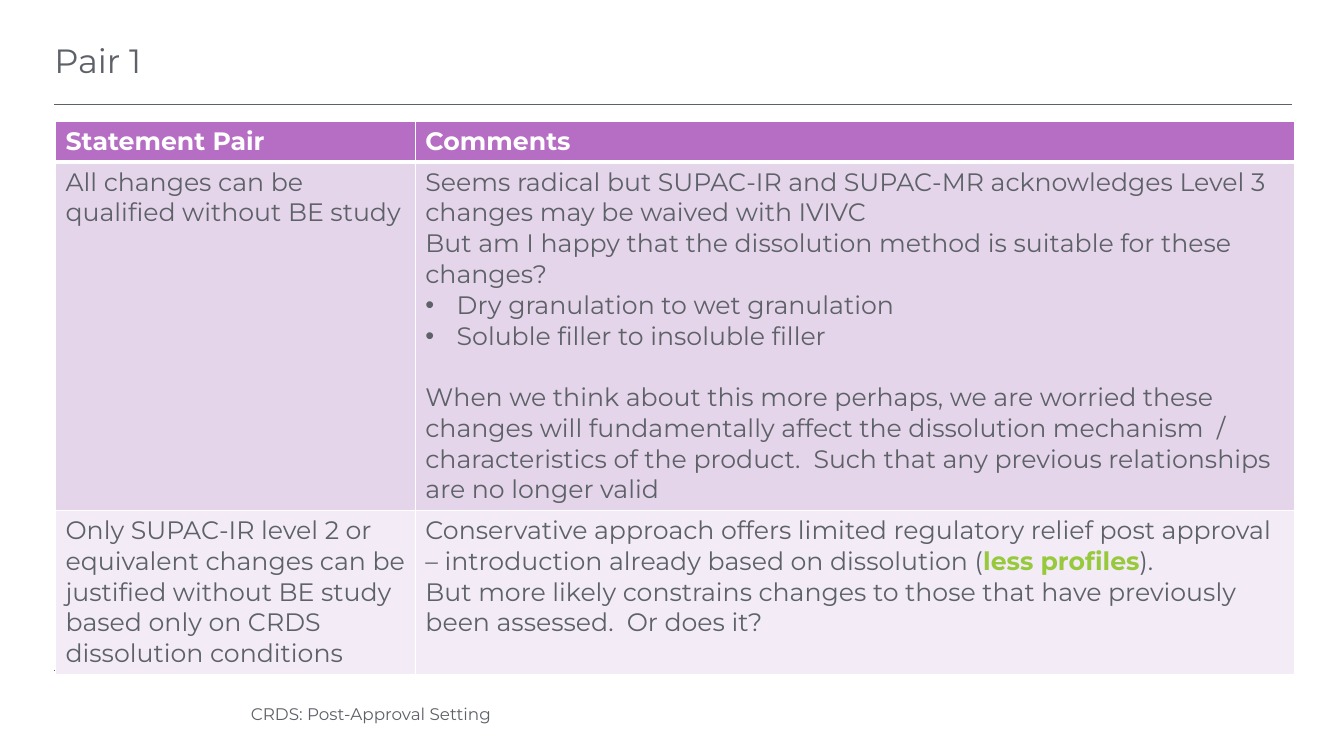
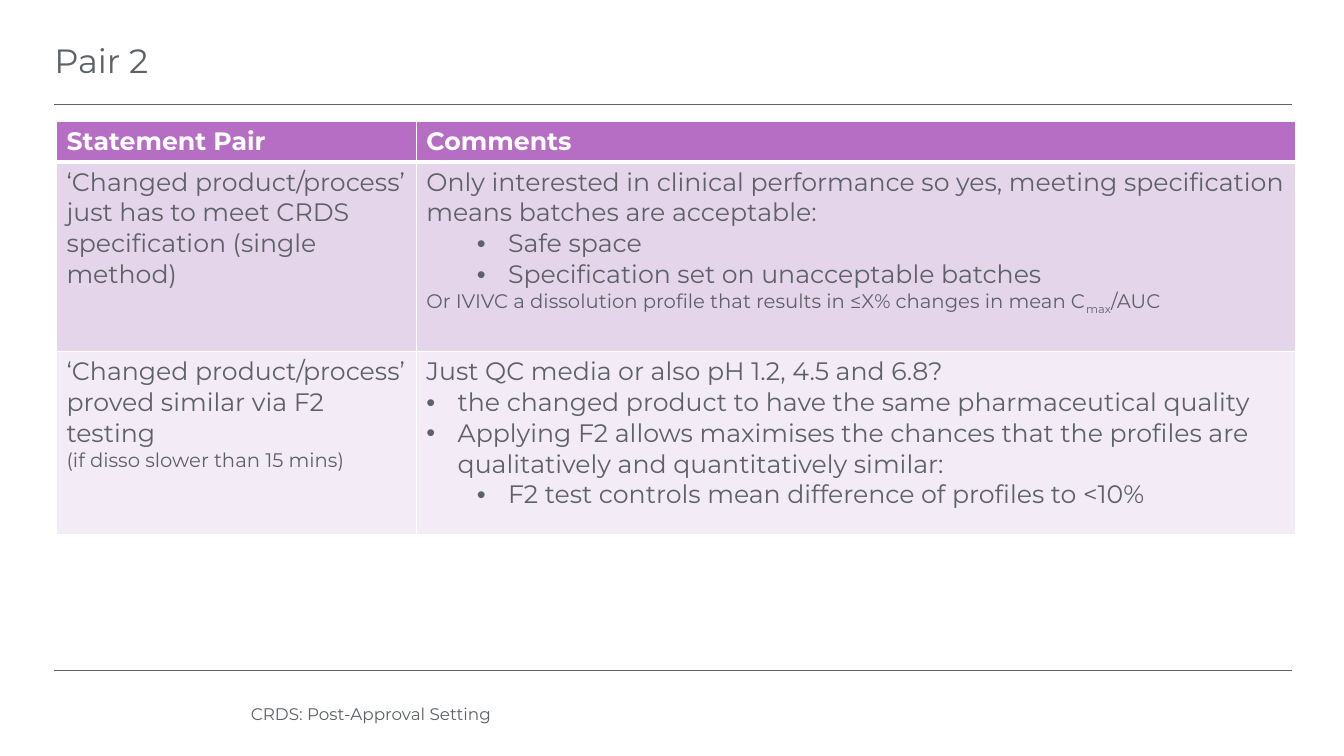
from dataclasses import dataclass
from typing import Optional

from lxml.etree import SubElement
from pptx import Presentation
from pptx.dml.color import RGBColor
from pptx.enum.shapes import MSO_CONNECTOR
from pptx.enum.text import MSO_ANCHOR
from pptx.oxml.ns import qn
from pptx.util import Emu, Inches, Pt

# Shared look
FONT = "Montserrat"
GREY, WHITE, GREEN = "5D6168", "FFFFFF", "97C93C"
HEADER_FILL = "B56EC4"
BODY_FILLS = ("E5D5EA", "F3EBF5")
SLIDE_WIDTH, SLIDE_HEIGHT = Inches(13.33), Inches(7.5)
GRID_COLUMNS, GRID_ROWS = 100, 75
RULE_LEFT, RULE_RIGHT = 4.05, 96.15
RULE_ROWS = (10.4, 66.5)
TABLE_TOP = 12
TABLE_COLUMNS = (26.78, 65.4)
HEADER_HEIGHT = 4.05
HEADINGS = ("Statement Pair", "Comments")
FOOTER = "CRDS: Post-Approval Setting"
BULLET_HANG = Inches(0.31)
BULLET_STEP = Inches(0.5)


@dataclass(frozen=True)
class Piece:
    text: str
    color: str = GREY
    bold: bool = False
    subscript: bool = False


@dataclass(frozen=True)
class Line:
    content: "str | tuple[Piece, ...]"
    size: float = 18
    bullet: Optional[int] = None
    space_before: float = 0


@dataclass(frozen=True)
class StatementRow:
    statement: tuple[Line, ...]
    comments: tuple[Line, ...]
    height: float


@dataclass(frozen=True)
class PairSlide:
    title: str
    table_left: float
    rows: tuple[StatementRow, ...]


PAIRS = (
    PairSlide("Pair 1", 4.13, (
        StatementRow(
            (Line("All changes can be qualified without BE study"),),
            (
                Line("Seems radical but SUPAC-IR and SUPAC-MR acknowledges Level 3 "
                     "changes may be waived with IVIVC"),
                Line("But am I happy that the dissolution method is suitable for "
                     "these changes?"),
                Line("Dry granulation to wet granulation", bullet=0),
                Line("Soluble filler to insoluble filler", bullet=0),
                Line("When we think about this more perhaps, we are worried these "
                     "changes will fundamentally affect the dissolution mechanism  / "
                     "characteristics of the product.  Such that any previous "
                     "relationships are no longer valid", space_before=22),
            ),
            34.5,
        ),
        StatementRow(
            (Line("Only SUPAC-IR level 2 or equivalent changes can be justified "
                  "without BE study based only on CRDS dissolution conditions"),),
            (
                Line((Piece("Conservative approach offers limited regulatory relief post "
                            "approval – introduction already based on dissolution ("),
                      Piece("less profiles", color=GREEN, bold=True),
                      Piece(")."))),
                Line("But more likely constrains changes to those that have previously "
                     "been assessed.  Or does it?"),
            ),
            16.1,
        ),
    )),
    PairSlide("Pair 2", 4.2, (
        StatementRow(
            (Line("‘Changed product/process’ just has to meet CRDS specification "
                  "(single method)"),),
            (
                Line("Only interested in clinical performance so yes, meeting "
                     "specification means batches are acceptable:"),
                Line("Safe space", bullet=1),
                Line("Specification set on unacceptable batches", bullet=1),
                Line((Piece("Or IVIVC a dissolution profile that results in ≤X% "
                            "changes in mean C"),
                      Piece("max", subscript=True),
                      Piece("/AUC")), size=14),
            ),
            18.8,
        ),
        StatementRow(
            (
                Line("‘Changed product/process’ proved similar via F2 testing"),
                Line("(if disso slower than 15 mins)", size=14),
            ),
            (
                Line("Just QC media or also pH 1.2, 4.5 and 6.8?"),
                Line("the changed product to have the same pharmaceutical quality",
                     bullet=0),
                Line("Applying F2 allows maximises the chances that the profiles are "
                     "qualitatively and quantitatively similar:", bullet=0),
                Line("F2 test controls mean difference of profiles to <10%", bullet=1),
            ),
            18.2,
        ),
    )),
)


def across(columns: float) -> Emu:
    return Emu(round(SLIDE_WIDTH * columns / GRID_COLUMNS))


def down(rows: float) -> Emu:
    return Emu(round(SLIDE_HEIGHT * rows / GRID_ROWS))


def rgb(color: str) -> RGBColor:
    return RGBColor.from_string(color)


def add_text(paragraph, text: str, *, size: float, color: str = GREY,
             bold: bool = False, subscript: bool = False) -> None:
    run = paragraph.add_run()
    run.text = text
    font = run.font
    font.name, font.size, font.bold = FONT, Pt(size), bold
    font.color.rgb = rgb(color)
    if subscript:
        run.font._element.set("baseline", "-25000")


def add_bullet(paragraph, level: int) -> None:
    paragraph.level = level
    properties = paragraph._p.get_or_add_pPr()
    properties.set("marL", str(BULLET_HANG + level * BULLET_STEP))
    properties.set("indent", str(-BULLET_HANG))
    SubElement(properties, qn("a:buFont")).set("typeface", "Arial")
    SubElement(properties, qn("a:buChar")).set("char", "•")


def write_lines(text_frame, lines: tuple[Line, ...]) -> None:
    for index, line in enumerate(lines):
        paragraph = text_frame.add_paragraph() if index else text_frame.paragraphs[0]
        if line.space_before:
            paragraph.space_before = Pt(line.space_before)
        if line.bullet is not None:
            add_bullet(paragraph, line.bullet)
        pieces = (Piece(line.content),) if isinstance(line.content, str) else line.content
        for piece in pieces:
            add_text(paragraph, piece.text, size=line.size, color=piece.color,
                     bold=piece.bold, subscript=piece.subscript)


def style_cell(cell, fill: str, top: float = 1, bottom: float = 1) -> None:
    properties = cell._tc.get_or_add_tcPr()
    for side, width in (("L", 1), ("R", 1), ("T", top), ("B", bottom)):
        border = SubElement(properties, qn(f"a:ln{side}"), w=str(Pt(width)))
        solid = SubElement(border, qn("a:solidFill"))
        SubElement(solid, qn("a:srgbClr"), val=WHITE)
    cell.fill.solid()
    cell.fill.fore_color.rgb = rgb(fill)


def add_rule(slide, layout, row: float) -> None:
    """Draw a rule and hand it to the layout, so that every slide shows it."""
    rule = slide.shapes.add_connector(MSO_CONNECTOR.STRAIGHT, across(RULE_LEFT), down(row),
                                      across(RULE_RIGHT), down(row))
    rule.line.color.rgb = rgb(GREY)
    rule.line.width = Pt(0.5)
    SubElement(rule._element.spPr, qn("a:effectLst"))
    layout.shapes.element.append(rule._element)


def add_title(slide, text: str) -> None:
    title = slide.shapes.title
    title.left, title.top = across(3.3), down(3.2)
    title.width, title.height = across(86.25), down(6)
    title.text_frame.vertical_anchor = MSO_ANCHOR.MIDDLE
    paragraph = title.text_frame.paragraphs[0]
    paragraph.alignment = 1
    paragraph.line_spacing = 0.9
    add_text(paragraph, text, size=24)


def add_footer(slide) -> None:
    footer = slide.shapes.add_textbox(across(17.92), down(68.8), across(33.75), down(4))
    footer.text_frame.word_wrap = True
    footer.text_frame.vertical_anchor = MSO_ANCHOR.MIDDLE
    add_text(footer.text_frame.paragraphs[0], FOOTER, size=12)


def add_pair_table(slide, pair: PairSlide) -> None:
    heights = (HEADER_HEIGHT, *(row.height for row in pair.rows))
    table = slide.shapes.add_table(
        len(heights), len(TABLE_COLUMNS), across(pair.table_left), down(TABLE_TOP),
        across(sum(TABLE_COLUMNS)), down(sum(heights))).table
    table.horz_banding = False
    for column, width in zip(table.columns, TABLE_COLUMNS):
        column.width = across(width)
    for row, height in zip(table.rows, heights):
        row.height = down(height)

    # Header row
    for cell, heading in zip(table.rows[0].cells, HEADINGS):
        style_cell(cell, HEADER_FILL, bottom=3)
        write_lines(cell.text_frame, (Line((Piece(heading, color=WHITE, bold=True),)),))

    # Statements and comments
    for index, (row, fill) in enumerate(zip(pair.rows, BODY_FILLS), start=1):
        for cell, lines in zip(table.rows[index].cells, (row.statement, row.comments)):
            style_cell(cell, fill, top=3 if index == 1 else 1)
            write_lines(cell.text_frame, lines)


def main() -> None:
    presentation = Presentation()
    presentation.slide_width, presentation.slide_height = SLIDE_WIDTH, SLIDE_HEIGHT
    layout = presentation.slide_layouts.get_by_name("Title Only")
    for number, pair in enumerate(PAIRS):
        slide = presentation.slides.add_slide(layout)
        if number == 0:
            for row in RULE_ROWS:
                add_rule(slide, layout, row)
        add_title(slide, pair.title)
        add_pair_table(slide, pair)
        add_footer(slide)
    presentation.save("out.pptx")


if __name__ == "__main__":
    main()
